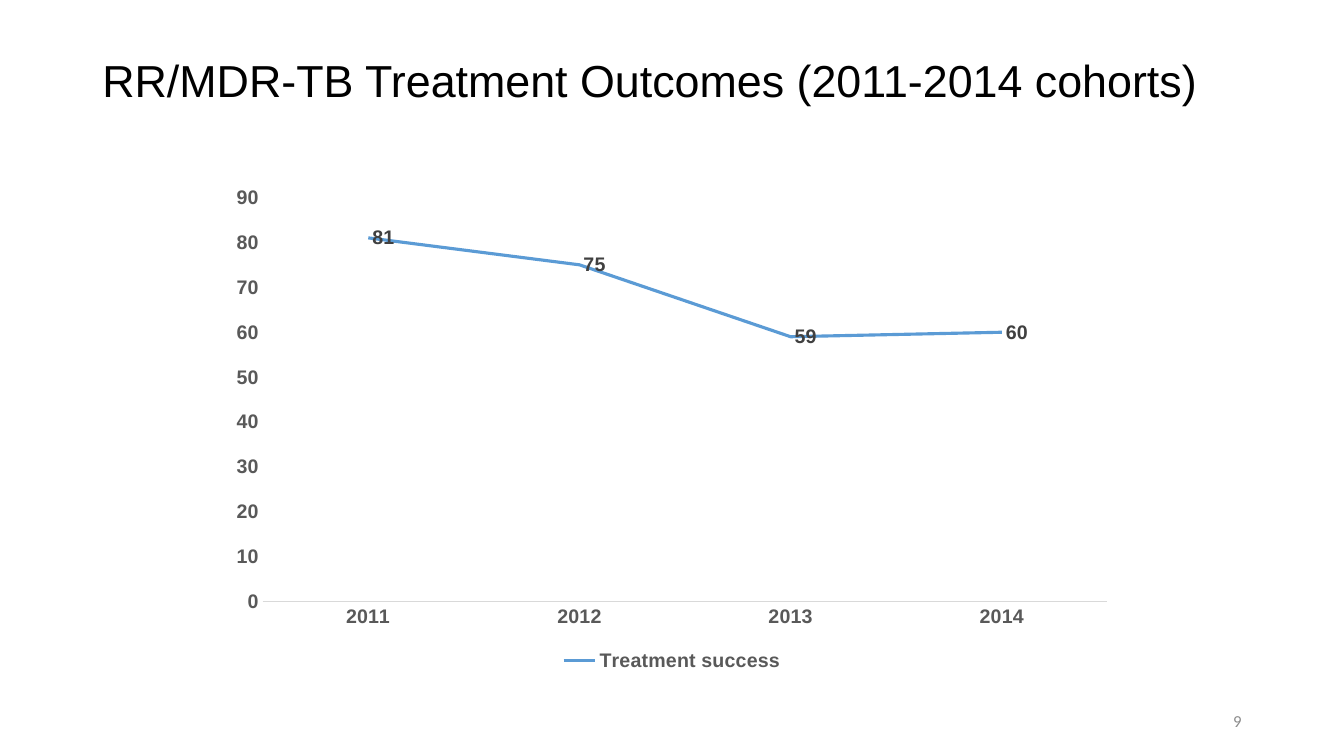
import dataclasses

import pptx
import pptx.chart.data
import pptx.dml.color
import pptx.enum.chart
import pptx.enum.text
import pptx.util

COLUMNS, ROWS = 160, 90  # square grid cells, twelve to the inch
CELL = pptx.util.Inches(1) // 12


@dataclasses.dataclass
class Theme:
    heading_font: str = "Arial"
    number_font: str = "Calibri"
    title_size: int = 32
    chart_size: int = 14
    number_size: int = 12
    ink: str = "000000"
    axis_text: str = "595959"
    label_text: str = "404040"
    axis_line: str = "D9D9D9"
    success_line: str = "5B9BD5"
    number_text: str = "8C8C8C"


def colour(value):
    return pptx.dml.color.RGBColor.from_string(value)


def apply(target, values):
    for name, value in values.items():
        setattr(target, name, value)


class Page:
    def __init__(self, deck, theme):
        self.theme = theme
        self.slide = deck.slides.add_slide(deck.slide_layouts[6])

    def place(self, column, row, columns, rows):
        return [round(cells * CELL) for cells in (column, row, columns, rows)]

    def style_font(self, font, name, size, ink, bold=False):
        apply(font, {"name": name, "size": pptx.util.Pt(size), "bold": bold})
        font.color.rgb = colour(ink)

    def text(self, words, area, name, size, ink, **paragraph_format):
        box = self.slide.shapes.add_textbox(*self.place(*area))
        frame = box.text_frame
        apply(frame, {"word_wrap": True,
                      "vertical_anchor": pptx.enum.text.MSO_ANCHOR.MIDDLE})
        para = frame.paragraphs[0]
        apply(para, paragraph_format)
        span = para.add_run()
        span.text = words
        self.style_font(span.font, name, size, ink)

    def line_chart(self, area, years, series_name, values):
        theme = self.theme
        kinds = pptx.enum.chart
        data = pptx.chart.data.CategoryChartData()
        data.categories = years
        data.add_series(series_name, values)
        chart = self.slide.shapes.add_chart(
            kinds.XL_CHART_TYPE.LINE, *self.place(*area), data).chart
        chart_font = (theme.heading_font, theme.chart_size)
        self.style_font(chart.font, *chart_font, theme.axis_text, True)
        apply(chart, {"has_title": False, "has_legend": True})
        apply(chart.legend, {"position": kinds.XL_LEGEND_POSITION.BOTTOM,
                             "include_in_layout": False})
        self.style_font(chart.legend.font, *chart_font, theme.axis_text, True)

        # Axes
        for axis in (chart.category_axis, chart.value_axis):
            apply(axis, {"has_major_gridlines": False,
                         "major_tick_mark": kinds.XL_TICK_MARK.NONE,
                         "minor_tick_mark": kinds.XL_TICK_MARK.NONE})
            self.style_font(axis.tick_labels.font, *chart_font,
                            theme.axis_text, True)
        apply(chart.value_axis, {"minimum_scale": 0, "maximum_scale": 90,
                                 "major_unit": 10})
        chart.value_axis.format.line.fill.background()
        self.style_line(chart.category_axis.format.line, theme.axis_line, 0.75)

        # Series and its values
        plot = chart.plots[0]
        plot.vary_by_categories = False
        series = plot.series[0]
        series.smooth = False
        series.marker.style = kinds.XL_MARKER_STYLE.NONE
        self.style_line(series.format.line, theme.success_line, 2.25)
        labels = series.data_labels
        apply(labels, {"show_value": True,
                       "position": kinds.XL_LABEL_POSITION.RIGHT})
        self.style_font(labels.font, *chart_font, theme.label_text, True)

    def style_line(self, line, ink, width):
        line.color.rgb = colour(ink)
        line.width = pptx.util.Pt(width)


def main():
    deck = pptx.Presentation()
    apply(deck, {"slide_width": COLUMNS * CELL, "slide_height": ROWS * CELL})
    theme = Theme()
    page = Page(deck, theme)

    # Title
    page.text("RR/MDR-TB Treatment Outcomes (2011-2014 cohorts)",
              (11, 4.8, 138, 10.2), theme.heading_font, theme.title_size,
              theme.ink, line_spacing=0.9)

    # Outcomes by cohort
    page.line_chart((26, 21, 108, 59.4), ["2011", "2012", "2013", "2014"],
                    "Treatment success", [81, 75, 59, 60])

    # Page number
    page.text("9", (113, 83.4, 36, 4.8), theme.number_font, theme.number_size,
              theme.number_text, alignment=pptx.enum.text.PP_ALIGN.RIGHT)

    deck.save("out.pptx")


if __name__ == "__main__":
    main()
